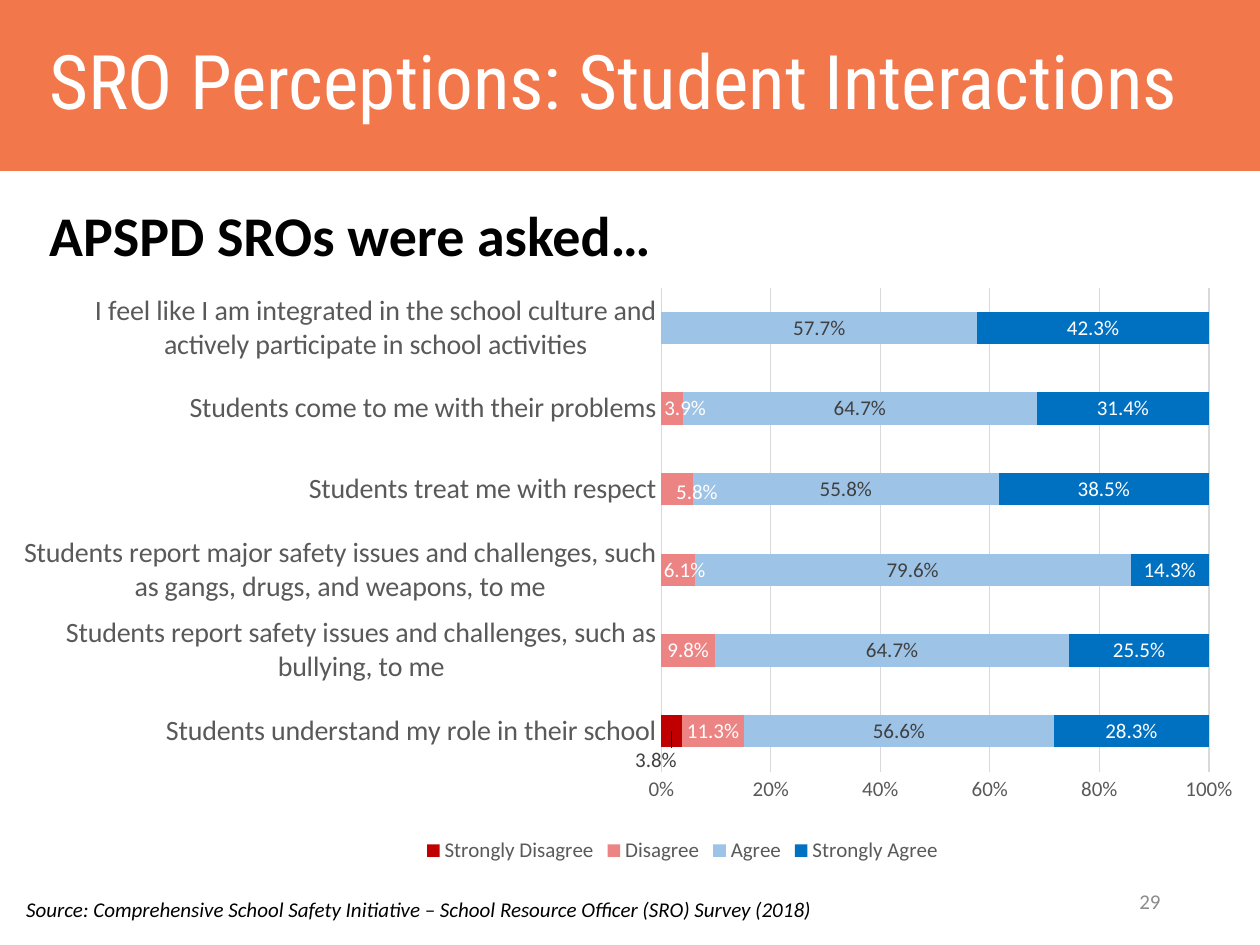
"""Build the slide on how officers see their contact with students."""
import pptx
import pptx.util
import pptx.chart.data
import pptx.dml.color
import pptx.enum.chart
import pptx.enum.shapes
import pptx.enum.text
import pptx.oxml
import pptx.oxml.ns

Pt = pptx.util.Pt
Align = pptx.enum.text.PP_ALIGN
Anchor = pptx.enum.text.MSO_ANCHOR
Ink = pptx.enum.chart

TITLE = "SRO Perceptions: Student Interactions"
LEAD = "APSPD SROs were asked…"
SOURCE = ("Source: Comprehensive School Safety Initiative – "
          "School Resource Officer (SRO) Survey (2018)")
PAGE = "29"
ITEMS = [
    "Students understand my role in their school",
    "Students report safety issues and challenges, such as bullying, to me",
    "Students report major safety issues and challenges, such as gangs, drugs, and weapons, to me",
    "Students treat me with respect",
    "Students come to me with their problems",
    "I feel like I am integrated in the school culture and actively participate in school activities",
]
# name, values, bar colour, label colour, label shifts by item
SERIES = [
    ("Strongly Disagree", (0.038, 0, 0, 0, 0, 0), "C00000", "404040",
     {0: (-0.012, 0.048)}),
    ("Disagree", (0.113, 0.098, 0.061, 0.058, 0.039, 0), "ED8484", "FFFFFF",
     {2: (0.005, 0), 3: (0.015, 0.005), 4: (0.01, 0)}),
    ("Agree", (0.566, 0.647, 0.796, 0.558, 0.647, 0.577), "9DC3E6", "404040", {}),
    ("Strongly Agree", (0.283, 0.255, 0.143, 0.385, 0.314, 0.423), "0070C0", "FFFFFF", {}),
]
ORANGE, GREY, RULE = "F2784B", "595959", "D9D9D9"
SHOWN = "0.0%;;"
PLOT = {"x": 0.484, "y": 0.032, "w": 0.416, "h": 0.807}


def tint(text):
    return pptx.dml.color.RGBColor.from_string(text)


def style(font, size, color, name="Calibri", bold=False, italic=False):
    font.size, font.name, font.bold, font.italic = Pt(size), name, bold, italic
    font.color.rgb = tint(color)


def place(shape, left, top, width, height):
    shape.left, shape.top, shape.width, shape.height = map(Pt, (left, top, width, height))


def write(shape, text, anchor=Anchor.TOP, align=Align.LEFT, **look):
    frame = shape.text_frame
    frame.text = text
    frame.word_wrap = True
    frame.auto_size = pptx.enum.text.MSO_AUTO_SIZE.NONE
    frame.vertical_anchor = anchor
    para = frame.paragraphs[0]
    para.alignment = align
    style(para.font, **look)
    return para


def layout(parts, inner=False):
    space = pptx.oxml.ns.nsdecls("c")
    modes = '<c:layoutTarget val="inner"/><c:xMode val="edge"/><c:yMode val="edge"/>' if inner else ""
    body = "".join(f'<c:{key} val="{val}"/>' for key, val in parts.items())
    return pptx.oxml.parse_xml(
        f"<c:layout {space}><c:manualLayout>{modes}{body}</c:manualLayout></c:layout>")


def shift(point, color, move):
    label = point.data_label
    style(label.font, 12, color)
    node = label._get_or_add_dLbl()
    form = pptx.oxml.parse_xml(
        f'<c:numFmt {pptx.oxml.ns.nsdecls("c")} formatCode="{SHOWN}" sourceLinked="0"/>')
    node.insert(1, layout(dict(zip("xy", move))))
    node.insert(2, form)


def add_bars(slide):
    data = pptx.chart.data.CategoryChartData(number_format="0.0%")
    data.categories = ITEMS
    for name, vals, *_ in SERIES:
        data.add_series(name, vals)
    chart = slide.shapes.add_chart(
        Ink.XL_CHART_TYPE.BAR_STACKED, Pt(13.7), Pt(153.4), Pt(752.4), Pt(342.7), data).chart
    style(chart.font, 12, "000000")
    chart.has_title = False
    chart.has_legend = True
    chart.legend.position = Ink.XL_LEGEND_POSITION.BOTTOM
    chart.legend.include_in_layout = False
    style(chart.legend.font, 12, GREY)
    plot = chart.plots[0]
    plot.gap_width, plot.overlap, plot.vary_by_categories = 150, 100, False
    area = chart._chartSpace.chart.plotArea
    for old in area.findall(pptx.oxml.ns.qn("c:layout")):
        area.remove(old)
    area.insert(0, layout(PLOT, inner=True))

    cats, scale = chart.category_axis, chart.value_axis
    for axis, size in ((cats, 16), (scale, 12)):
        axis.major_tick_mark = axis.minor_tick_mark = Ink.XL_TICK_MARK.NONE
        style(axis.tick_labels.font, size, GREY)
    scale.minimum_scale, scale.maximum_scale, scale.major_unit = 0, 1, 0.2
    scale.tick_labels.number_format = "0%"
    scale.tick_labels.number_format_is_linked = False
    scale.format.line.fill.background()
    for line in (cats.format.line, scale.major_gridlines.format.line):
        line.color.rgb, line.width = tint(RULE), Pt(0.75)

    for bars, (_, _, fill, color, moves) in zip(plot.series, SERIES):
        bars.format.fill.solid()
        bars.format.fill.fore_color.rgb = tint(fill)
        labels = bars.data_labels
        labels.show_value = True
        labels.number_format, labels.number_format_is_linked = SHOWN, False
        style(labels.font, 12, color)
        for spot, move in moves.items():
            shift(bars.points[spot], color, move)


def main():
    deck = pptx.Presentation()
    deck.slide_width, deck.slide_height = Pt(720), Pt(540)
    slide = deck.slides.add_slide(deck.slide_layouts[1])
    shapes = slide.shapes
    title, lead = shapes.title, slide.placeholders[1]

    band = shapes.add_shape(pptx.enum.shapes.MSO_SHAPE.RECTANGLE, 0, 0, Pt(720), Pt(97.2))
    band.shadow.inherit = False
    band.fill.solid()
    band.fill.fore_color.rgb = band.line.color.rgb = tint(ORANGE)
    band.line.width = Pt(1)
    shapes._spTree.insert(2, band._element)

    place(title, 20.9, 0, 699.1, 97.2)
    para = write(title, TITLE, Anchor.MIDDLE, size=43, color="FFFFFF", name="Roboto Condensed")
    para.line_spacing = 0.9

    place(lead, 20.9, 110.9, 650, 374.4)
    para = write(lead, LEAD, size=32, color="000000", bold=True)
    para.space_before = Pt(10)
    props = para._p.get_or_add_pPr()
    props.set("marL", "0")
    props.set("indent", "0")
    bullet = pptx.oxml.parse_xml(f'<a:buNone {pptx.oxml.ns.nsdecls("a")}/>')
    props.find(pptx.oxml.ns.qn("a:spcBef")).addnext(bullet)

    note = shapes.add_textbox(Pt(7.9), Pt(509), Pt(650.9), Pt(21.6))
    write(note, SOURCE, size=12, color="000000", italic=True)
    add_bars(slide)
    page = shapes.add_textbox(Pt(508.3), Pt(500.4), Pt(162), Pt(28.8))
    write(page, PAGE, Anchor.MIDDLE, Align.RIGHT, size=12, color="8C8C8C")
    deck.save("out.pptx")


if __name__ == "__main__":
    main()
